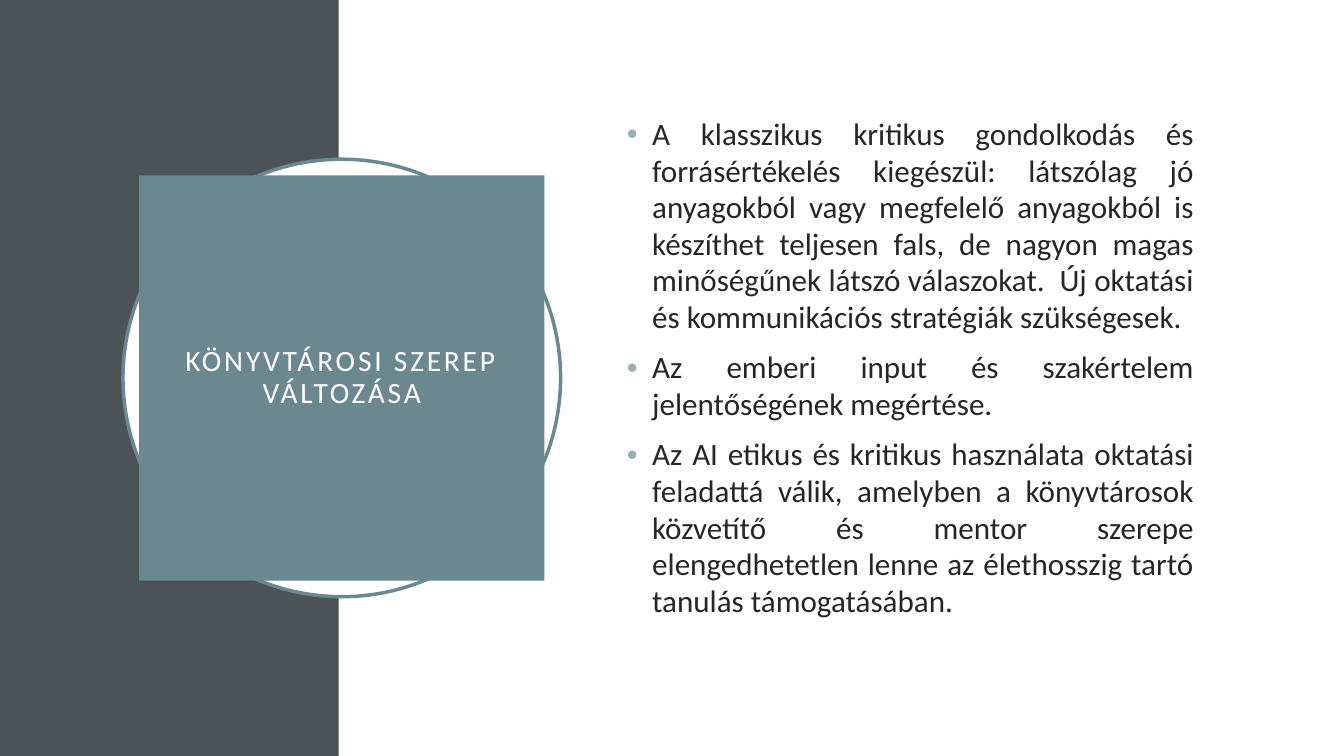
import pptx
import pptx.util
import pptx.dml.color
import pptx.enum.shapes
import pptx.enum.text
import pptx.oxml.ns
from lxml import etree

W, H = 13.33, 7.5
FONT = "Calibri"
COLORS = {"dark": "4A5356", "teal": "6B8891", "white": "FFFFFF",
          "text": "262626", "bullet": "9BAFB5"}
TITLE = "KÖNYVTÁROSI SZEREP VÁLTOZÁSA"
POINTS = [
    "A klasszikus kritikus gondolkodás és forrásértékelés kiegészül: látszólag jó "
    "anyagokból vagy megfelelő anyagokból is készíthet teljesen fals, de nagyon magas "
    "minőségűnek látszó válaszokat.  Új oktatási és kommunikációs stratégiák szükségesek.",
    "Az emberi input és szakértelem jelentőségének megértése.",
    "Az AI etikus és kritikus használata oktatási feladattá válik, amelyben a "
    "könyvtárosok közvetítő és mentor szerepe elengedhetetlen lenne az élethosszig "
    "tartó tanulás támogatásában.",
]
SHAPE = pptx.enum.shapes.MSO_SHAPE
ALIGN = pptx.enum.text.PP_ALIGN
MIDDLE = pptx.enum.text.MSO_ANCHOR.MIDDLE


def rgb(name):
    return pptx.dml.color.RGBColor.from_string(COLORS[name])


def inches(*lengths):
    return [pptx.util.Inches(v) for v in lengths]


def fill(sp, color):
    sp.fill.solid()
    sp.fill.fore_color.rgb = rgb(color)


def add_shape(s, kind, box, color, line=None):
    sp = s.shapes.add_shape(kind, *inches(*box))
    sp.shadow.inherit = False
    fill(sp, color)
    if line:
        sp.line.color.rgb = rgb(line)
        sp.line.width = pptx.util.Pt(2.5)
    else:
        sp.line.fill.background()


def set_frame(tf, left, top, right, bottom):
    tf.word_wrap = True
    tf.auto_size = pptx.enum.text.MSO_AUTO_SIZE.NONE
    tf.vertical_anchor = MIDDLE
    tf.margin_left, tf.margin_top, tf.margin_right, tf.margin_bottom = inches(
        left, top, right, bottom)


def set_paragraph(p, size, color, align, spacing):
    p.font.name, p.font.size = FONT, pptx.util.Pt(size)
    p.font.color.rgb = rgb(color)
    p.alignment, p.line_spacing = align, spacing


def add_bullet(p):
    ppr = p._p.get_or_add_pPr()
    indent = pptx.util.Inches(0.25)
    ppr.set("marL", str(indent))
    ppr.set("indent", str(-indent))
    qn = pptx.oxml.ns.qn
    clr = etree.Element(qn("a:buClr"))
    etree.SubElement(clr, qn("a:srgbClr"), val=COLORS["bullet"])
    font = etree.Element(qn("a:buFont"), typeface="Arial")
    char = etree.Element(qn("a:buChar"), char="•")
    # Bullet settings must precede the default run properties
    for el in (clr, font, char):
        ppr.find(qn("a:defRPr")).addprevious(el)


def add_title_badge(s, box):
    x, y, side = box
    add_shape(s, SHAPE.OVAL, (x, y, side, side), "white", "teal")
    # The title square sits centred on the ring, in front of it
    gap = 0.16
    inner = side - 2 * gap
    sp = s.shapes.title
    sp.left, sp.top, sp.width, sp.height = inches(x + gap, y + gap, inner, inner)
    fill(sp, "teal")
    s.shapes._spTree.append(sp._element)
    tf = sp.text_frame
    set_frame(tf, 0.2, 0.2, 0.2, 0.2)
    p = tf.paragraphs[0]
    r = p.add_run()
    r.text = TITLE
    r._r.get_or_add_rPr().set("spc", "200")
    set_paragraph(p, 21, "white", ALIGN.CENTER, 0.9)


def add_points(s, box):
    tf = s.shapes.add_textbox(*inches(*box)).text_frame
    set_frame(tf, 0.1, 0.05, 0.1, 0.43)
    for i, point in enumerate(POINTS):
        p = tf.add_paragraph() if i else tf.paragraphs[0]
        p.text = point
        set_paragraph(p, 22.2, "text", ALIGN.JUSTIFY, 0.98)
        p.space_before = pptx.util.Pt(10)
        add_bullet(p)


def main():
    prs = pptx.Presentation()
    prs.slide_width, prs.slide_height = inches(W, H)
    s = prs.slides.add_slide(prs.slide_layouts[5])
    fill(s.background, "white")
    # Dark band on the left quarter
    add_shape(s, SHAPE.RECTANGLE, (0, 0, 3.36, H), "dark")
    add_title_badge(s, (1.22, 1.58, 4.34))
    add_points(s, (6.12, 1, 5.82, 5.68))
    prs.save("out.pptx")


if __name__ == "__main__":
    main()
